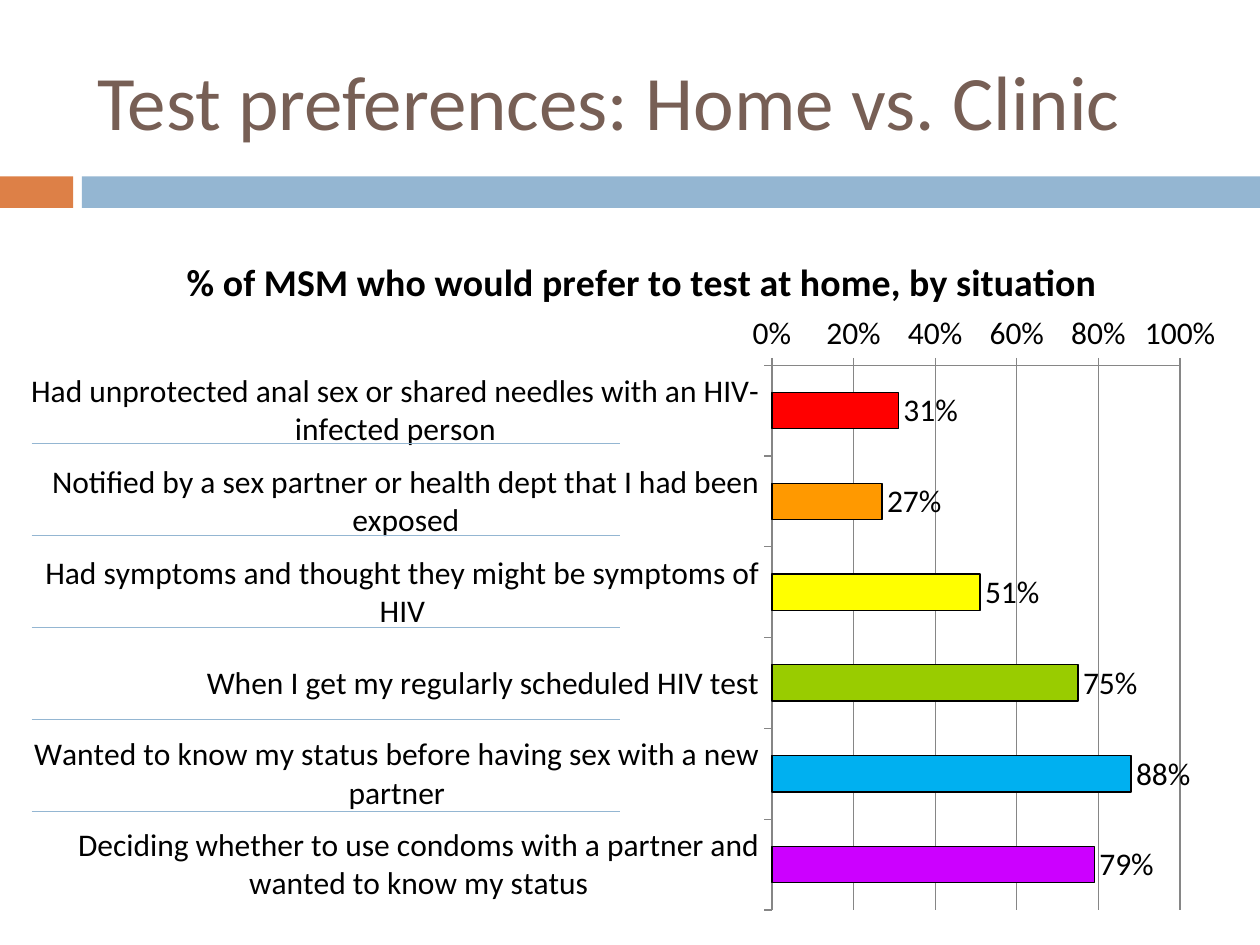
from dataclasses import dataclass

from lxml.etree import SubElement
from pptx import Presentation
from pptx.chart.data import CategoryChartData
from pptx.dml.color import RGBColor
from pptx.enum.chart import XL_CHART_TYPE, XL_LABEL_POSITION, XL_TICK_MARK
from pptx.enum.shapes import MSO_CONNECTOR, MSO_SHAPE
from pptx.enum.text import MSO_ANCHOR, MSO_AUTO_SIZE, PP_ALIGN
from pptx.oxml import parse_xml
from pptx.oxml.ns import nsdecls, qn
from pptx.util import Inches, Pt


@dataclass(frozen=True)
class Theme:
    font: str = "Calibri"
    title: str = "775F55"
    text: str = "000000"
    blue: str = "94B6D2"
    orange: str = "DD8047"
    axis: str = "868686"
    head_size: float = 44
    name_size: float = 21.6
    text_size: float = 18


@dataclass(frozen=True)
class Band:
    left: float
    width: float
    color: str


@dataclass(frozen=True)
class Bar:
    label: str
    value: float
    color: str


THEME = Theme()
BANDS = [Band(0, 0.58, THEME.orange), Band(0.65, 9.35, THEME.blue)]
BARS = [
    Bar("Had unprotected anal sex or shared needles with an HIV-infected person", 0.31, "FF0000"),
    Bar("Notified by a sex partner or health dept that I had been exposed", 0.27, "FF9900"),
    Bar("Had symptoms and thought they might be symptoms of HIV", 0.51, "FFFF00"),
    Bar("When I get my regularly scheduled HIV test", 0.75, "99CC00"),
    Bar("Wanted to know my status before having sex with a new partner", 0.88, "00B0F0"),
    Bar("Deciding whether to use condoms with a partner and wanted to know my status", 0.79, "CC00FF"),
]


def rgb(color: str) -> RGBColor:
    return RGBColor.from_string(color)


def set_font(font, size: float, color: str, bold: bool = False) -> None:
    font.name = THEME.font
    font.size = Pt(size)
    font.bold = bold
    font.color.rgb = rgb(color)


def set_line(line, color: str, width: float = 0.75) -> None:
    line.color.rgb = rgb(color)
    line.width = Pt(width)


def add_band(slide, band: Band) -> None:
    shape = slide.shapes.add_shape(
        MSO_SHAPE.RECTANGLE, Inches(band.left), Inches(1.4), Inches(band.width), Inches(0.25)
    )
    shape.shadow.inherit = False
    shape.fill.solid()
    shape.fill.fore_color.rgb = rgb(band.color)
    shape.line.fill.background()


def set_title(slide) -> None:
    title = slide.shapes.title
    title.left, title.top = Inches(0.67), Inches(0.25)
    title.width, title.height = Inches(8.92), Inches(1.08)
    frame = title.text_frame
    frame.text = "Test preferences: Home vs. Clinic"
    frame.auto_size = MSO_AUTO_SIZE.NONE
    frame.vertical_anchor = MSO_ANCHOR.MIDDLE
    para = frame.paragraphs[0]
    para.alignment = PP_ALIGN.LEFT
    set_font(para.font, THEME.head_size, THEME.title)


def set_place(parent, **parts: float) -> None:
    for old in parent.findall(qn("c:layout")):
        parent.remove(old)
    layout = parse_xml(f"<c:layout {nsdecls('c')}/>")
    manual = SubElement(layout, qn("c:manualLayout"))
    if "w" in parts:
        SubElement(manual, qn("c:layoutTarget")).set("val", "inner")
    for side in ("x", "y"):
        SubElement(manual, qn(f"c:{side}Mode")).set("val", "edge")
    for key, value in parts.items():
        SubElement(manual, qn(f"c:{key}")).set("val", str(value))
    text = parent.find(qn("c:tx"))
    parent.insert(0 if text is None else 1, layout)


def add_bars(slide) -> None:
    data = CategoryChartData(number_format="0%")
    data.categories = [bar.label for bar in BARS]
    data.add_series("Series 1", [bar.value for bar in BARS])
    chart = slide.shapes.add_chart(
        XL_CHART_TYPE.BAR_CLUSTERED, Inches(0.17), Inches(1.75), Inches(9.67), Inches(5.58), data
    ).chart
    set_font(chart.font, THEME.text_size, THEME.text)
    chart.has_legend = False
    chart.has_title = True
    title = chart.chart_title
    title.include_in_layout = False
    title.text_frame.text = "% of MSM who would prefer to test at home, by situation"
    set_font(title.text_frame.paragraphs[0].font, THEME.name_size, THEME.text, True)
    set_place(title.format.line._get_or_add_ln().getparent().getparent(), x=0.13, y=0.04)
    title.format.line.fill.background()

    for axis in (chart.category_axis, chart.value_axis):
        axis.major_tick_mark = XL_TICK_MARK.OUTSIDE
        axis.minor_tick_mark = XL_TICK_MARK.NONE
        set_line(axis.format.line, THEME.axis)
        set_font(axis.tick_labels.font, THEME.text_size, THEME.text)
    chart.category_axis.reverse_order = True
    scale = chart.value_axis
    scale.minimum_scale, scale.maximum_scale, scale.major_unit = 0, 1, 0.2
    scale.has_major_gridlines = True
    set_line(scale.major_gridlines.format.line, THEME.axis)
    scale.tick_labels.number_format = "0%"
    scale.tick_labels.number_format_is_linked = False

    plot = chart.plots[0]
    plot.gap_width = 150
    plot.vary_by_categories = False
    plot.has_data_labels = True
    labels = plot.data_labels
    labels.show_value = True
    labels.number_format = "0%"
    labels.number_format_is_linked = False
    labels.position = XL_LABEL_POSITION.OUTSIDE_END
    set_font(labels.font, THEME.text_size, THEME.text)
    series = plot.series[0]
    series.format.fill.solid()
    series.format.fill.fore_color.rgb = rgb(THEME.blue)
    set_line(series.format.line, THEME.text)
    for spot, bar in enumerate(BARS):
        form = series.points[spot].format
        form.fill.solid()
        form.fill.fore_color.rgb = rgb(bar.color)
        set_line(form.line, THEME.text)
    area = chart.element.find(f".//{qn('c:plotArea')}")
    set_place(area, x=0.616, y=0.206, w=0.335, h=0.775)


def add_rule(slide, top: float) -> None:
    rule = slide.shapes.add_connector(
        MSO_CONNECTOR.STRAIGHT, Inches(0.25), Inches(top), Inches(4.92), Inches(top)
    )
    set_line(rule.line, THEME.blue, 0.79)
    SubElement(rule.element.spPr, qn("a:effectLst"))


def main() -> None:
    deck = Presentation()
    deck.slide_width, deck.slide_height = Inches(10), Inches(7.5)
    slide = deck.slides.add_slide(deck.slide_layouts[5])
    for band in BANDS:
        add_band(slide, band)
    set_title(slide)
    add_bars(slide)
    for row in range(len(BARS) - 1):
        add_rule(slide, 3.52 + 0.73 * row)
    deck.save("out.pptx")


if __name__ == "__main__":
    main()
